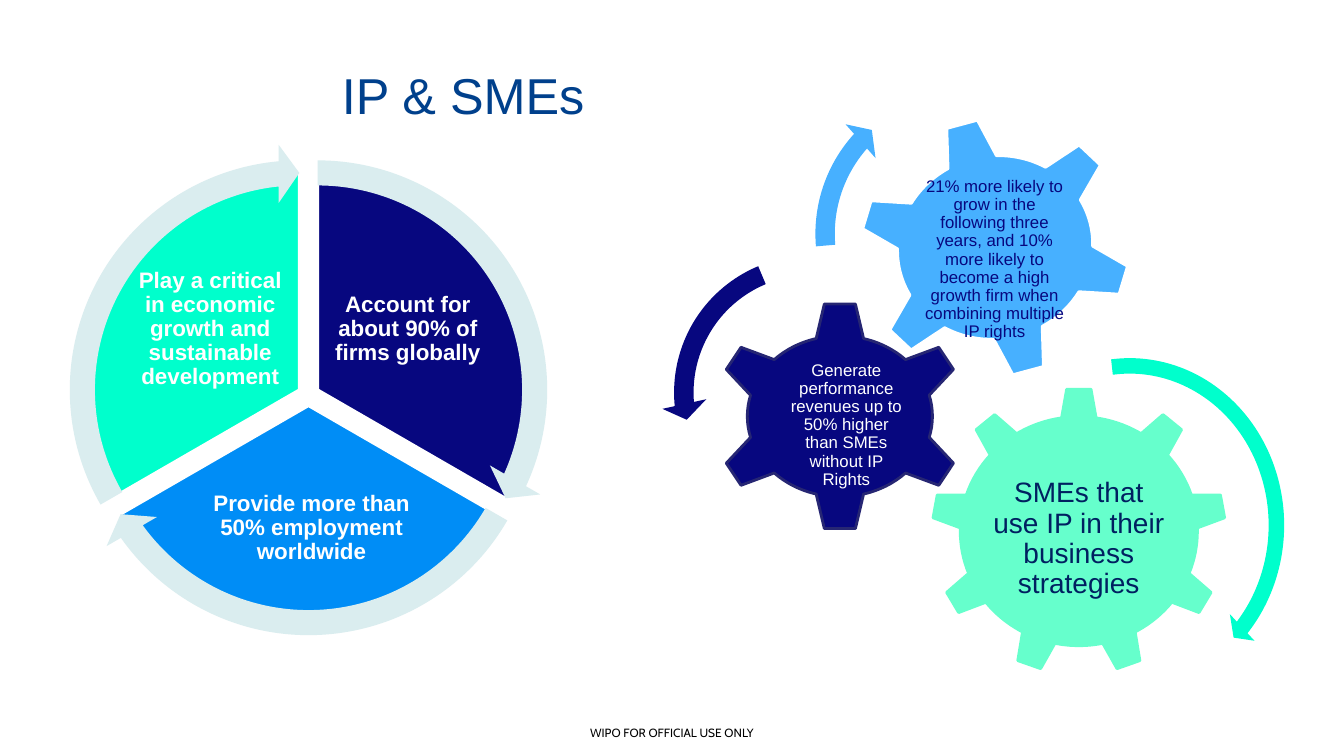
"""Build the IP & SMEs slide: a three-part cycle beside three turning gears."""
from math import cos, radians, sin
from pptx import Presentation
from pptx.dml.color import RGBColor as Rgb
from pptx.enum.shapes import MSO_SHAPE as Kind
from pptx.enum.text import MSO_ANCHOR as Anchor, PP_ALIGN as Align
from pptx.util import Inches, Pt

THEME = dict(
    navy="07077F", azure="008DF6", sky="47B0FF", aqua="00FFCC", mint="66FFCC",
    pale="DAEDEF", rim="262673", ink="002060", blue="00408C", white="FFFFFF",
    black="000000", title=36, lead=20, cycle=16, gear=12, foot=8.5)

TITLE = "IP & SMEs"
FOOTER = "WIPO FOR OFFICIAL USE ONLY"

GEARS = [
    dict(kind=Kind.GEAR_9, at=(9.24, 3.85, 2.92, 2.84), fill="mint", line="mint",
         text="SMEs that use IP in their business strategies",
         box=(9.82, 4.52, 1.76, 1.46),
         form=dict(size="lead", color="ink", anchor=Anchor.BOTTOM, pad=0.03)),
    dict(kind=Kind.GEAR_6, at=(7.07, 2.99, 2.52, 2.28), fill="navy", line="rim",
         text="Generate performance revenues up to 50% higher than SMEs without IP Rights",
         box=(7.68, 3.57, 1.3, 1.13),
         form=dict(size="gear", color="white", anchor=Anchor.TOP, left=0.15)),
    dict(kind=Kind.GEAR_6, at=(8.51, 1.16, 2.72, 2.59), fill="sky", line="white", turn=345,
         text="21% more likely to grow in the following three years, and 10% more likely "
              "to become a high growth firm when combining multiple IP rights",
         box=(9.11, 1.84, 1.51, 1.47),
         form=dict(size="gear", color="navy")),
]
ARROWS = [
    (Kind.CIRCULAR_ARROW, (9.57, 3.45, 3.27, 3.52), "aqua",
     (0.047, 2.99, 25.376, 158.159, 0.055)),
    (Kind.LEFT_CIRCULAR_ARROW, (6.56, 2.41, 2.97, 2.97), "navy",
     (0.065, 4.3, 104.891, 148.378, 0.075)),
    (Kind.CIRCULAR_ARROW, (7.96, 0.72, 3.2, 3.2), "sky",
     (0.06, 3.941, 133.138, 105.082, 0.07)),
]
CYCLE = [
    ("Account for about 90% of firms globally", "navy", (3.27, 2.62, 1.55, 1.29)),
    ("Provide more than 50% employment worldwide", "azure", (1.93, 4.67, 2.32, 1.14)),
    ("Play a critical in economic growth and sustainable development", "aqua",
     (1.31, 2.62, 1.55, 1.29)),
]
HUB_X, HUB_Y, GAP = 3.06, 3.92, 0.105
PIE, RING = 4.34, 4.88
TURN, START, STEP, HEAD = 216, 162, 72, 3.275


def tint(name):
    return Rgb.from_string(THEME[name])


def draw(host, kind, at, fill, line=None, adj=(), turn=0):
    shape = host.add_shape(kind, *map(Inches, at))
    shape.shadow.inherit = False
    shape.rotation = turn
    for i, value in enumerate(adj):
        shape.adjustments[i] = value
    shape.fill.solid()
    shape.fill.fore_color.rgb = tint(fill)
    if line:
        shape.line.color.rgb = tint(line)
        shape.line.width = Pt(2)
    else:
        shape.line.fill.background()


def write(shape, text, size, color, font="Arial", bold=False, align=Align.CENTER,
          anchor=Anchor.MIDDLE, pad=0.02, left=None, space=0.9):
    frame = shape.text_frame
    frame.word_wrap = True
    frame.vertical_anchor = anchor
    frame.margin_top = frame.margin_right = frame.margin_bottom = Inches(pad)
    frame.margin_left = Inches(pad if left is None else left)
    par = frame.paragraphs[0]
    par.alignment = align
    par.line_spacing = space
    run = par.add_run()
    run.text = text
    run.font.name, run.font.size, run.font.bold = font, Pt(THEME[size]), bold
    run.font.color.rgb = tint(color)


def label(host, text, at, **form):
    write(host.add_textbox(*map(Inches, at)), text, **form)


def gears(host):
    for gear in GEARS:
        draw(host, gear["kind"], gear["at"], gear["fill"], gear["line"],
             turn=gear.get("turn", 0))
        label(host, gear["text"], gear["box"], **gear["form"])
    for kind, at, fill, adj in ARROWS:
        draw(host, kind, at, fill, adj=adj)


def cycle(host):
    rings = []
    for i, (text, fill, box) in enumerate(CYCLE):
        ray = radians(120 * i - 30)
        x, y = HUB_X + GAP * cos(ray), HUB_Y + GAP * sin(ray)
        start, end = (START + STEP * i) % TURN, (START + STEP * (i + 1)) % TURN
        draw(host, Kind.PIE, (x - PIE / 2, y - PIE / 2, PIE, PIE), fill, "white", (start, end))
        label(host, text, box, size="cycle", color="white", bold=True)
        rings.append(((x - RING / 2, y - RING / 2, RING, RING),
                      (0.051, HEAD, end - HEAD, start, 0.059)))
    for at, adj in rings:
        draw(host, Kind.CIRCULAR_ARROW, at, "pale", adj=adj)


def main():
    deck = Presentation()
    deck.slide_width, deck.slide_height = Inches(13.33), Inches(7.5)
    slide = deck.slides.add_slide(deck.slide_layouts[5])
    label(slide.shapes, FOOTER, (0, 7.15, 13.33, 0.24), size="foot", color="black",
          font="Cabin", space=1)
    title = slide.shapes.title
    title.left, title.top, title.width, title.height = map(Inches, (3.29, 0.44, 4.39, 1))
    write(title, TITLE, size="title", color="blue", align=Align.LEFT, pad=0.05, left=0.1, space=1)
    gears(slide.shapes.add_group_shape().shapes)
    cycle(slide.shapes.add_group_shape().shapes)
    deck.save("out.pptx")


if __name__ == "__main__":
    main()
